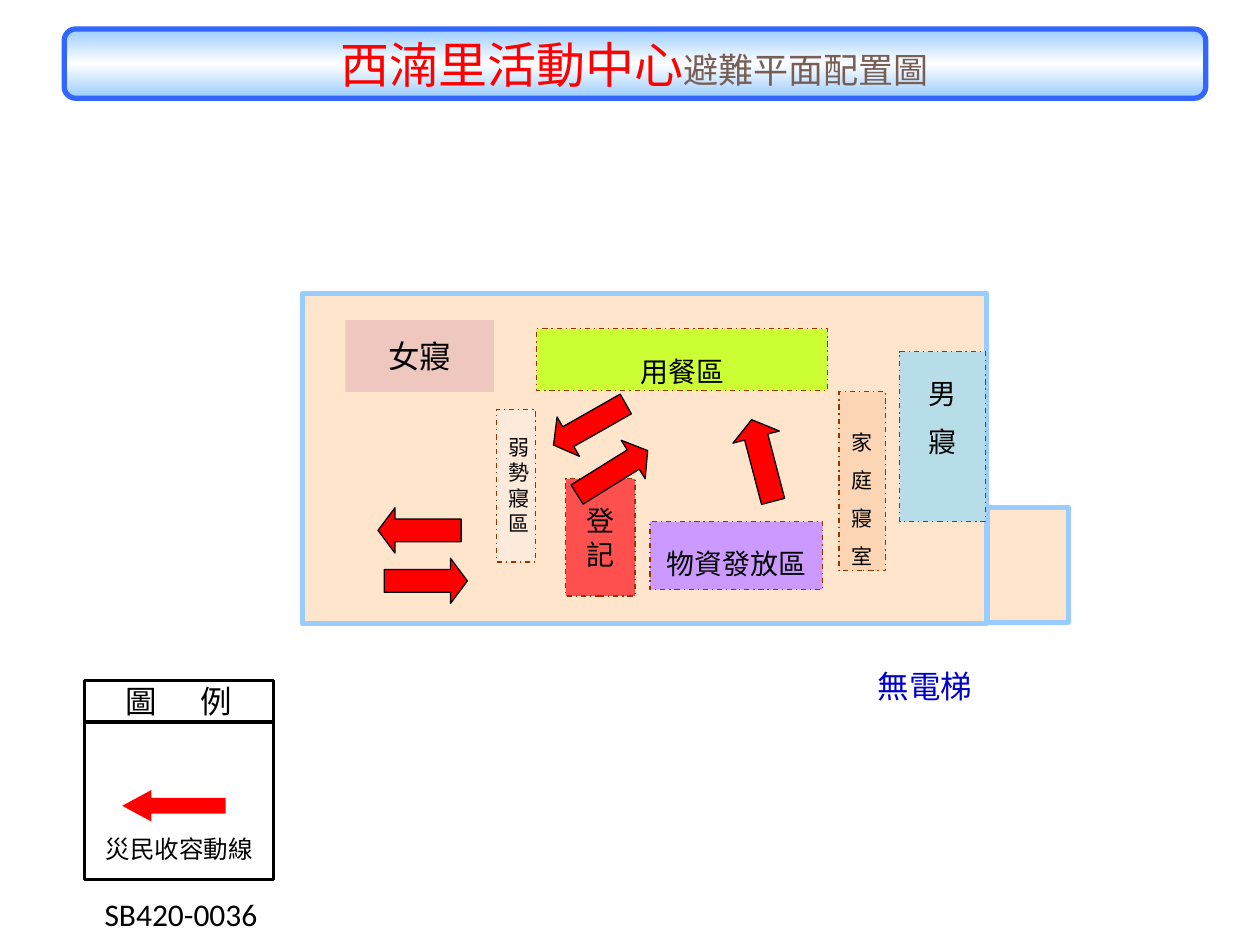
import copy

import lxml.etree
import pptx
import pptx.dml.color
import pptx.enum.dml
import pptx.enum.shapes
import pptx.enum.text
import pptx.oxml.ns
import pptx.util

COLORS = {
    "red": "FF0000", "brown": "775F55", "black": "000000", "white": "FFFFFF",
    "bar_line": "3366FF", "wall": "99CCFF", "floor": "FFCC99",
    "room_line": "993300", "register": "FF5050", "supplies": "CC99FF",
    "dining": "CCFF33", "men": "B7DEE8", "family": "FCD5B5",
    "vulnerable": "FDEADA", "women": "E6B9B8", "note": "0000CC",
}
SHAPE = pptx.enum.shapes.MSO_SHAPE
ALIGN = pptx.enum.text.PP_ALIGN
ANCHOR = pptx.enum.text.MSO_ANCHOR
Pt = pptx.util.Pt
qn = pptx.oxml.ns.qn

deck = pptx.Presentation()
deck.slide_width = pptx.util.Inches(10)
deck.slide_height = pptx.util.Inches(7.5)
COLUMN = deck.slide_width / 10
ROW = deck.slide_height / 7.5
page = deck.slides.add_slide(deck.slide_layouts[5])


def rgb(name):
    return pptx.dml.color.RGBColor.from_string(COLORS[name])


def add_box(parent, kind, place, fill=None, line=None, width=0.75, opacity=100):
    """Add a preset shape; place is left and width in columns, top and height in rows."""
    left, top, wide, high = place
    box = parent.add_shape(kind, int(left * COLUMN), int(top * ROW),
                           int(wide * COLUMN), int(high * ROW))
    box.shadow.inherit = False
    if fill:
        box.fill.solid()
        box.fill.fore_color.rgb = rgb(fill)
    else:
        box.fill.background()
    if opacity < 100:
        color = box._element.spPr.find(".//" + qn("a:srgbClr"))
        lxml.etree.SubElement(color, qn("a:alpha"), val=str(opacity * 1000))
    if line:
        box.line.color.rgb = rgb(line)
        box.line.width = Pt(width)
    else:
        box.line.fill.background()
    return box


# Title on its gradient bar
bar_place = (0.51, 0.23, 9.06, 0.55)
bar = add_box(page.shapes, SHAPE.ROUNDED_RECTANGLE, bar_place, line="bar_line", width=3)
bar.fill.gradient()
bar.fill.gradient_angle = 270
stop_list = bar._element.spPr.find(".//" + qn("a:gsLst"))
stop_list.insert(1, copy.deepcopy(stop_list[0]))
for stop, position, color in zip(bar.fill.gradient_stops, (0, 0.5, 1), ("wall", "white", "wall")):
    stop.position = position
    stop.color.rgb = rgb(color)

title = page.shapes.title
title.left, title.top, title.width, title.height = bar.left, bar.top, bar.width, bar.height
title._element.addprevious(bar._element)
title.text_frame.auto_size = pptx.enum.text.MSO_AUTO_SIZE.NONE
title.text_frame.word_wrap = False
title.text_frame.vertical_anchor = ANCHOR.MIDDLE
para = title.text_frame.paragraphs[0]
para.alignment = ALIGN.CENTER
for words, size, font, color in (
    ("西湳里活動中心", 28, "Noto Sans CJK SC", "red"),
    ("避難平面配置圖", 20, "Arial", "brown"),
):
    span = para.add_run()
    span.text = words
    span.font.size = Pt(size)
    span.font.name = font
    span.font.color.rgb = rgb(color)

# Building outline: main hall and side wing
for place in ((2.4, 2.33, 5.43, 2.62), (7.84, 4.03, 0.64, 0.91)):
    add_box(page.shapes, SHAPE.RECTANGLE, place, "floor", "wall", 3, opacity=50)

# Rooms
rooms = (
    ("登記", (4.49, 3.8, 0.55, 0.93), "register", 16, 1),
    ("物資發放區", (5.16, 4.14, 1.37, 0.54), "supplies", 16, 1),
    ("用餐區", (4.26, 2.61, 2.31, 0.49), "dining", 16, 1),
    ("男\n寢", (7.14, 2.79, 0.68, 1.35), "men", 16, 1),
    ("家庭寢室", (6.66, 3.11, 0.37, 1.42), "family", 12, 1.5),
    ("弱勢寢區", (3.94, 3.25, 0.31, 1.21), "vulnerable", 12, 1),
)
for words, place, fill, size, spacing in rooms:
    room = add_box(page.shapes, SHAPE.RECTANGLE, place, fill, "room_line")
    room.line.dash_style = pptx.enum.dml.MSO_LINE.DASH_DOT
    frame = room.text_frame
    frame.text = words
    frame.word_wrap = True
    frame.vertical_anchor = ANCHOR.TOP
    frame.margin_top = int(0.2 * ROW)
    for para in frame.paragraphs:
        para.alignment = ALIGN.CENTER
        para.line_spacing = spacing
        para.space_before = Pt(size / 2)
        para.font.size = Pt(size)
        para.font.name = "Arial"
        para.font.color.rgb = rgb("black")

women = add_box(page.shapes, SHAPE.RECTANGLE, (2.74, 2.54, 1.18, 0.57), "women", opacity=68)

# Evacuee routes
routes = (
    ((5.86, 3.32, 0.38, 0.67), 165.3),
    ((4.5, 3.04, 0.36, 0.66), 60.4),
    ((3.2, 4.28, 0.36, 0.66), 270),
    ((3.15, 3.88, 0.36, 0.66), 90),
    ((4.68, 3.42, 0.36, 0.66), 238.1),
)
for place, angle in routes:
    arrow = add_box(page.shapes, SHAPE.DOWN_ARROW, place, "red", "black")
    arrow.adjustments[1] = 0.374
    arrow.rotation = angle

# Legend
legend = page.shapes.add_group_shape().shapes
heading = add_box(legend, SHAPE.RECTANGLE, (0.67, 5.4, 1.5, 0.33), line="black", width=2)
add_box(legend, SHAPE.RECTANGLE, (0.67, 5.73, 1.5, 1.25), line="black", width=2)
sample = add_box(legend, SHAPE.RIGHT_ARROW, (0.97, 6.27, 0.82, 0.25), "red")
sample.adjustments[1] = 0.924
sample.rotation = 180
route_label = add_box(legend, SHAPE.RECTANGLE, (0.74, 6.57, 1.37, 0.33))

# Plain labels
code = add_box(page.shapes, SHAPE.RECTANGLE, (0.4, 7.05, 3.1, 0.4))
code.text_frame.margin_left = int(0.43 * COLUMN)
heading.text_frame.margin_left = int(0.33 * COLUMN)
note = add_box(page.shapes, SHAPE.RECTANGLE, (6.86, 5.24, 0.96, 0.4))
for box, words, size, color, alignment in (
    (women, "女寢", 18, "black", ALIGN.CENTER),
    (heading, "圖\t例", 18, "black", ALIGN.LEFT),
    (route_label, "災民收容動線", 14, "black", ALIGN.CENTER),
    (code, "SB420-0036", 18, "black", ALIGN.LEFT),
    (note, "無電梯", 18, "note", ALIGN.CENTER),
):
    frame = box.text_frame
    frame.text = words
    frame.word_wrap = box in (heading, code)
    frame.vertical_anchor = ANCHOR.MIDDLE
    para = frame.paragraphs[0]
    para.alignment = alignment
    para.font.size = Pt(size)
    para.font.name = "Calibri"
    para.font.color.rgb = rgb(color)

# The tab stop spreads the two characters of the legend heading
properties = heading.text_frame.paragraphs[0]._p.get_or_add_pPr()
tabs = lxml.etree.Element(qn("a:tabLst"))
lxml.etree.SubElement(tabs, qn("a:tab"), pos=str(int(0.59 * COLUMN)), algn="l")
properties.insert(0, tabs)

deck.save("out.pptx")
